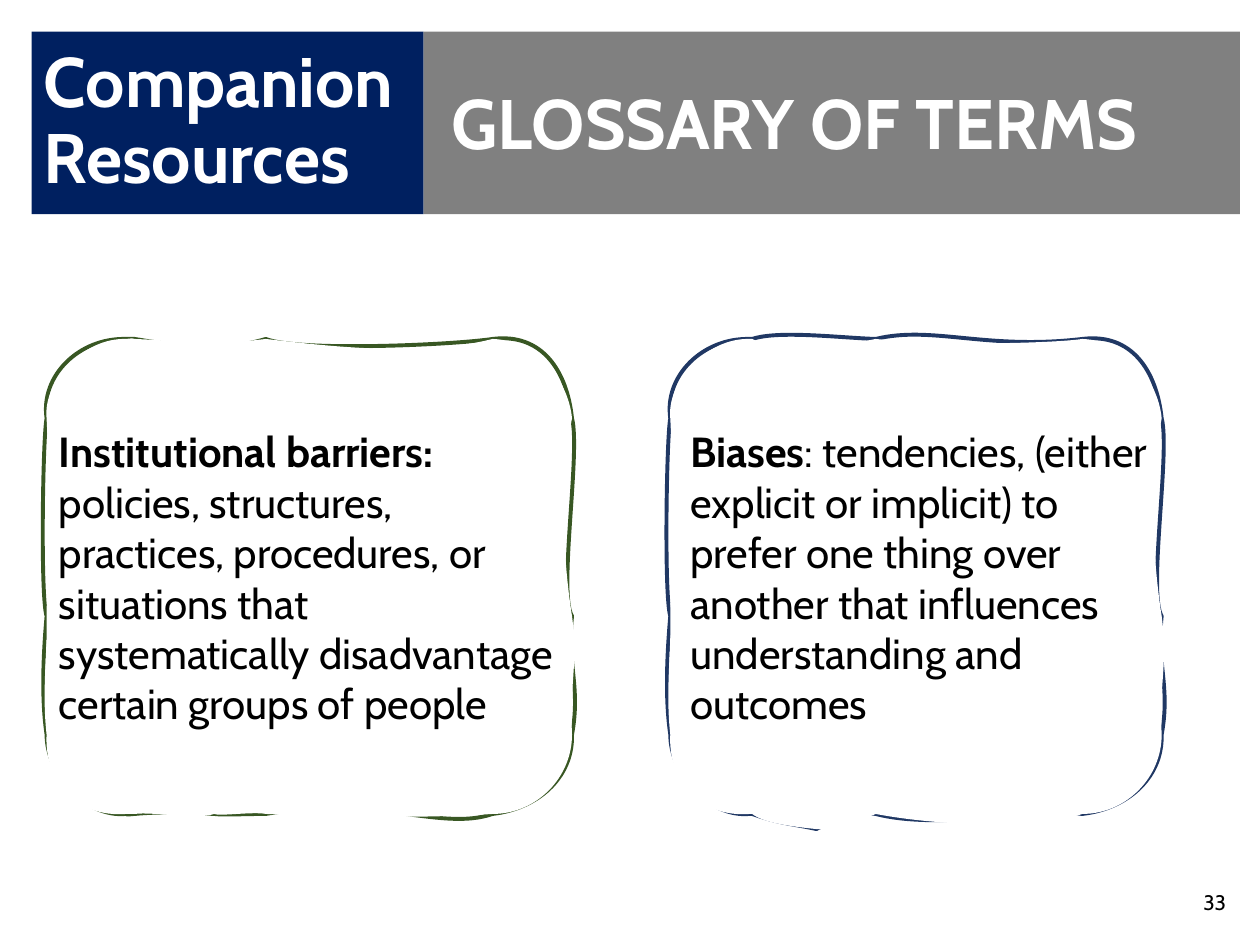
from lxml import etree
from pptx import Presentation
from pptx import util as u
from pptx.dml.color import RGBColor
from pptx.enum import shapes, text
from pptx.oxml.ns import qn

PX = 9144  # EMU per px, 100 px to the inch
FONT = "Cabin"
COLORS = {
    "navy": "002060",
    "gray": "808080",
    "blue": "203864",
    "green": "385723",
    "white": "FFFFFF",
    "black": "000000",
}
CARD_TOP, CARD_HEIGHT = 269, 378

# Each hand-drawn side is a list of curves: two control points and an end point.
# The right side counts x from the card's right edge, the others from its left.
SIDES = {
    "stroke": {
        "corner": [(-5, 29, 26, -1, 63, 0)],
        "right": [(-24, -5, -4, 25, 0, 63), (7, 89, -11, 202, 0, 220),
                  (-4, 258, 7, 276, 0, 314), (1, 349, -28, 373, -63, 377)],
        "left": [(31, 380, 0, 346, 0, 314), (-4, 287, -3, 254, 0, 220),
                 (-5, 204, -3, 78, 0, 63)],
    },
    "fill": {
        "corner": [(-3, 34, 29, -1, 63, 0)],
        "right": [(-30, 1, -3, 31, 0, 63), (-11, 118, -6, 182, 0, 220),
                  (5, 259, -2, 272, 0, 314), (0, 348, -28, 377, -63, 377)],
        "left": [(24, 380, -2, 351, 0, 314), (-4, 278, 1, 248, 0, 220),
                 (1, 157, 3, 121, 0, 63)],
    },
}
BARRIERS_EDGES = {
    "stroke": {
        "top": [(64, 0, 66, 0, 70, 0), (118, 8, 143, 9, 174, 0),
                (199, 10, 320, 5, 354, 0)],
        "bottom": [(313, 391, 263, 362, 174, 377), (155, 377, 141, 378, 133, 377),
                   (111, 376, 91, 375, 70, 377), (67, 377, 64, 378, 63, 377)],
    },
    "fill": {
        "top": [(66, 0, 67, -1, 70, 0), (119, 2, 124, 6, 174, 0),
                (218, 5, 295, 15, 354, 0)],
        "bottom": [(307, 380, 255, 380, 174, 377), (164, 375, 137, 379, 133, 377),
                   (118, 382, 85, 375, 70, 377), (68, 377, 65, 377, 63, 377)],
    },
}
BIASES_EDGES = {
    "stroke": {
        "top": [(63, 0, 64, 0, 65, 0), (86, -7, 134, -1, 163, 0),
                (208, -11, 250, 9, 327, 0)],
        "bottom": [(296, 373, 213, 390, 163, 377), (156, 375, 122, 385, 116, 389),
                   (98, 385, 88, 385, 65, 377), (64, 377, 63, 377, 63, 377)],
    },
    "fill": {
        "top": [(64, 0, 64, 0, 65, 0), (78, 7, 125, 8, 163, 0),
                (221, 6, 308, 3, 327, 0)],
        "bottom": [(291, 390, 210, 386, 163, 377), (154, 381, 128, 390, 116, 389),
                   (96, 387, 74, 384, 65, 377), (64, 377, 64, 377, 63, 377)],
    },
}


def px(*values):
    return [u.Emu(v * PX) for v in values]


def rgb(name):
    return RGBColor.from_string(COLORS[name])


def write(sp, *parts, size, color="black", anchor=text.MSO_ANCHOR.MIDDLE,
          align=text.PP_ALIGN.LEFT, spacing=None, left=10):
    """Fill a shape with one paragraph; each part is (words, bold)."""
    tf = sp.text_frame
    tf.word_wrap = True
    tf.vertical_anchor = anchor
    tf.margin_left, tf.margin_right = px(left, 10)
    p = tf.paragraphs[0]
    p.alignment = align
    p.line_spacing = spacing
    for words, bold in parts:
        for i, line in enumerate(words.split("\n")):
            if i:
                p.add_line_break()
            r = p.add_run()
            r.text = line
            r.font.name, r.font.size, r.font.bold = FONT, u.Pt(size), bold
            r.font.color.rgb = rgb(color)


def add_banner(slide, x, width, fill):
    sp = slide.shapes.add_shape(shapes.MSO_SHAPE.RECTANGLE, *px(x, 25, width, 145))
    sp.shadow.inherit = False
    sp.fill.solid()
    sp.fill.fore_color.rgb = rgb(fill)
    sp.line.fill.background()
    return sp


def add_points(parent, tag, values):
    node = etree.SubElement(parent, qn(tag))
    for x, y in zip(values[::2], values[1::2]):
        etree.SubElement(node, qn("a:pt"), x=str(x), y=str(y))


def draw_curves(path_list, width, sides, edges, **flags):
    """Add one closed outline, clockwise from the top of the left side."""
    outline = etree.SubElement(path_list, qn("a:path"), w=str(width),
                               h=str(CARD_HEIGHT), **flags)
    right = [[v + width * (i % 2 == 0) for i, v in enumerate(curve)]
             for curve in sides["right"]]
    add_points(outline, "a:moveTo", (0, 63))
    for curve in (sides["corner"] + edges["top"] + right
                  + edges["bottom"] + sides["left"]):
        add_points(outline, "a:cubicBezTo", curve)
    etree.SubElement(outline, qn("a:close"))


def add_card(slide, x, width, line, edges):
    """A sketched frame: a stroked outline partly covered by a filled one."""
    right, bottom = x + width, CARD_TOP + CARD_HEIGHT
    builder = slide.shapes.build_freeform(x, CARD_TOP, scale=PX)
    builder.add_line_segments([(right, CARD_TOP), (right, bottom), (x, bottom)])
    sp = builder.convert_to_shape()
    path_list = sp._element.spPr.find(".//" + qn("a:pathLst"))
    for child in list(path_list):
        path_list.remove(child)
    draw_curves(path_list, width, SIDES["stroke"], edges["stroke"], fill="none")
    draw_curves(path_list, width, SIDES["fill"], edges["fill"], stroke="0")
    sp.shadow.inherit = False
    sp.fill.solid()
    sp.fill.fore_color.rgb = rgb("white")
    sp.line.color.rgb = rgb(line)
    sp.line.width = u.Pt(2.25)
    return sp


def main():
    prs = Presentation()
    prs.slide_width, prs.slide_height = px(1000, 750)
    slide = prs.slides.add_slide(prs.slide_layouts[6])

    number = slide.shapes.add_textbox(*px(758, 696, 225, 40))
    write(number, ("33", False), size=12, align=text.PP_ALIGN.RIGHT)

    biases = add_card(slide, 532, 390, "blue", BIASES_EDGES)
    write(biases, ("Biases", True),
          (": tendencies, (either explicit or implicit) to prefer one thing over "
           "another that influences understanding and outcomes", False),
          size=24, left=16)
    barriers = add_card(slide, 37, 417, "green", BARRIERS_EDGES)
    write(barriers, ("Institutional barriers: ", True),
          ("policies, structures, practices, procedures, or situations that "
           "systematically disadvantage certain groups of people", False), size=24)

    heading = add_banner(slide, 336, 648, "gray")
    write(heading, (" GLOSSARY OF TERMS", True), size=40, color="white",
          anchor=text.MSO_ANCHOR.TOP, spacing=1.5)
    title = add_banner(slide, 25, 311, "navy")
    write(title, ("Companion\nResources", True), size=40, color="white", spacing=0.9)

    prs.save("out.pptx")


if __name__ == "__main__":
    main()
